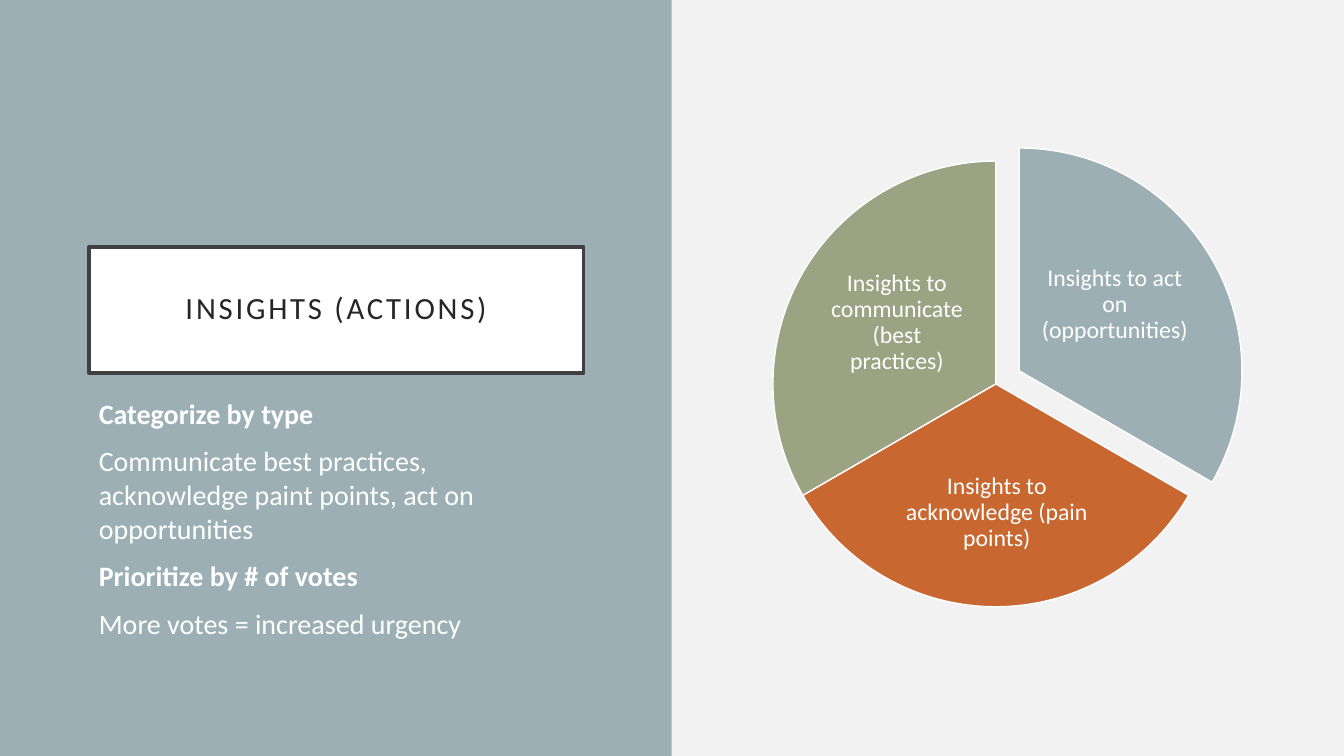
from dataclasses import dataclass

from pptx import Presentation
from pptx import util as u
from pptx.dml.color import RGBColor
from pptx.enum import shapes, text


@dataclass(frozen=True)
class Theme:
    """Colours, font and type sizes of the slide."""
    font: str = "Calibri"
    paper: str = "F2F2F2"
    white: str = "FFFFFF"
    ink: str = "262626"
    frame: str = "404040"
    blue: str = "9BAFB5"
    orange: str = "C96731"
    green: str = "9CA383"
    title_size: int = 22
    body_size: int = 20
    label_size: int = 17


class SlideBuilder:
    """Draws styled elements on the current page."""

    def __init__(self, page, theme):
        """Keep the page and theme, and paint the background."""
        self.page, self.theme = page, theme
        background = page.background.fill
        background.solid()
        background.fore_color.rgb = RGBColor.from_string(theme.paper)

    def shape(self, kind, area, fill, line=None, width=1):
        """Add a filled preset shape with an optional outline."""
        box = self.page.shapes.add_shape(kind, *map(u.Cm, area))
        box.shadow.inherit = False
        box.fill.solid()
        box.fill.fore_color.rgb = RGBColor.from_string(fill)
        if line:
            box.line.color.rgb = RGBColor.from_string(line)
            box.line.width = u.Pt(width)
        else:
            box.line.fill.background()
        return box

    def textbox(self, area):
        """Add an empty text box."""
        return self.page.shapes.add_textbox(*map(u.Cm, area))

    def center_frame(self, box, inset):
        """Centre the text vertically inside equal insets."""
        frame = box.text_frame
        frame.vertical_anchor = text.MSO_ANCHOR.MIDDLE
        frame.margin_left = frame.margin_right = u.Cm(inset)
        frame.margin_top = frame.margin_bottom = u.Cm(inset)

    def add_lines(self, box, lines, size, color, centred=False, before=0, spacing=0):
        """Add (wording, bold) lines, one paragraph each."""
        frame = box.text_frame
        frame.word_wrap = True
        for index, (wording, bold) in enumerate(lines):
            para = frame.add_paragraph() if index else frame.paragraphs[0]
            para.alignment = text.PP_ALIGN.CENTER if centred else text.PP_ALIGN.LEFT
            para.space_before = u.Pt(before)
            if centred:
                para.line_spacing = 0.9
            span = para.add_run()
            span.text = wording
            span.font.name = self.theme.font
            span.font.size = u.Pt(size)
            span.font.bold = bold
            span.font.color.rgb = RGBColor.from_string(color)
            if spacing:
                span.font._element.set("spc", str(spacing * 100))

    def title(self, area, wording):
        """Add the framed title."""
        theme = self.theme
        box = self.shape(shapes.MSO_SHAPE.RECTANGLE, area, theme.white, theme.frame, 2.5)
        self.center_frame(box, 0.51)
        self.add_lines(box, [(wording, False)], theme.title_size, theme.ink, True, spacing=2)

    def slice(self, area, start, sweep, fill, wording, label_area):
        """Add a pie slice, angles in degrees, with its label."""
        theme = self.theme
        wedge = self.shape(shapes.MSO_SHAPE.PIE, area, fill, theme.white)
        for index, angle in enumerate((start, start + sweep)):
            wedge.adjustments[index] = angle % 360 * 0.6
        label = self.textbox(label_area)
        self.center_frame(label, 0.05)
        self.add_lines(label, [(wording, False)], theme.label_size, theme.white, True)


def main():
    """Build and save the deck."""
    theme = Theme()
    deck = Presentation()
    deck.slide_width, deck.slide_height = u.Cm(33.87), u.Cm(19.05)
    builder = SlideBuilder(deck.slides.add_slide(deck.slide_layouts[6]), theme)

    builder.shape(shapes.MSO_SHAPE.RECTANGLE, (0, 0, 16.93, 19.05), theme.blue)
    builder.title((2.24, 6.22, 12.47, 3.18), "INSIGHTS (ACTIONS)")

    diameter = 11.23
    pie_left, pie_top = 19.48, 4.06
    slices = [
        ("Insights to act on (opportunities)", theme.blue,
         (0.59, -0.33), (26.19, 5.82, 3.81, 3.73)),
        ("Insights to acknowledge (pain points)", theme.orange,
         (0, 0), (22.58, 11.18, 5.08, 3.48)),
        ("Insights to communicate (best practices)", theme.green,
         (0, 0), (20.7, 6.27, 3.81, 3.73)),
    ]
    sweep = 360 / len(slices)
    for index, (wording, fill, (shift_x, shift_y), label_area) in enumerate(slices):
        area = (pie_left + shift_x, pie_top + shift_y, diameter, diameter)
        builder.slice(area, 270 + index * sweep, sweep, fill, wording, label_area)

    body = builder.textbox((2.24, 9.86, 12.47, 6.1))
    builder.add_lines(body, [
        ("Categorize by type", True),
        ("Communicate best practices, acknowledge paint points, act on opportunities", False),
        ("Prioritize by # of votes", True),
        ("More votes = increased urgency", False),
    ], theme.body_size, theme.white, before=10)

    deck.save("out.pptx")


if __name__ == "__main__":
    main()
